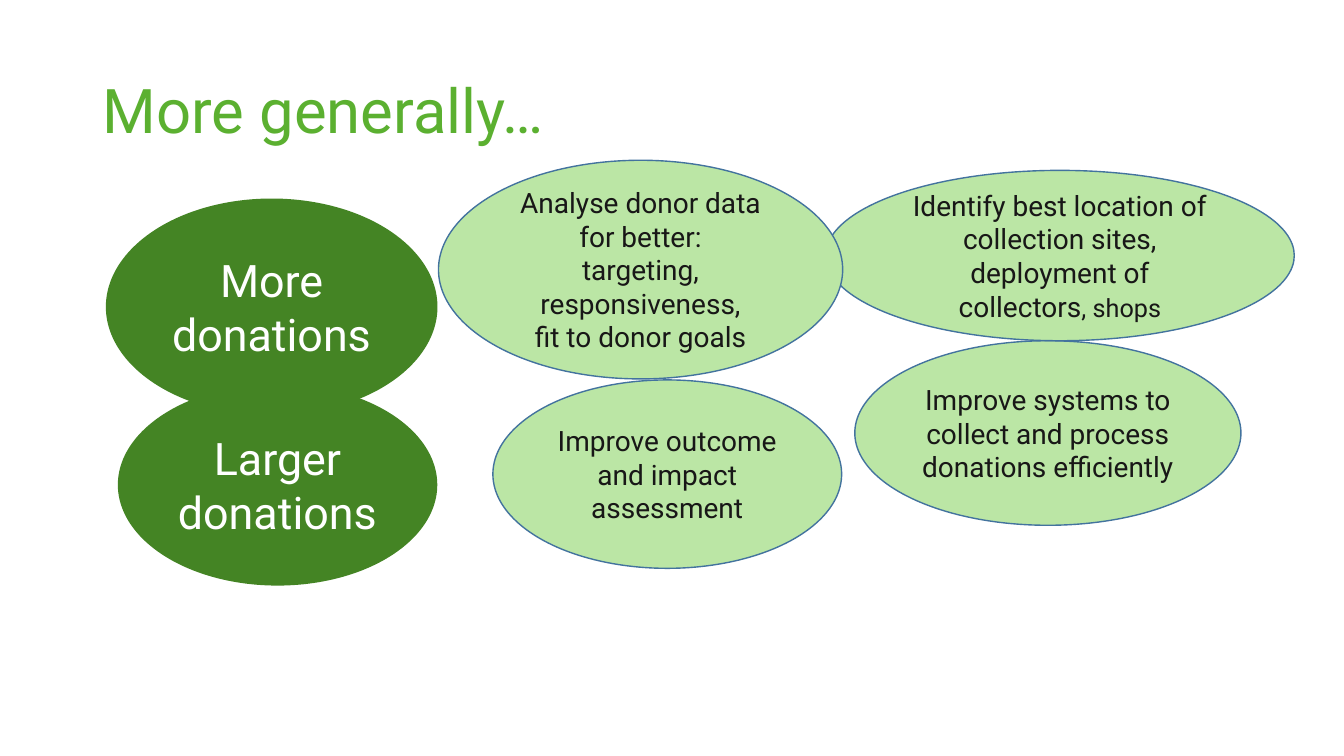
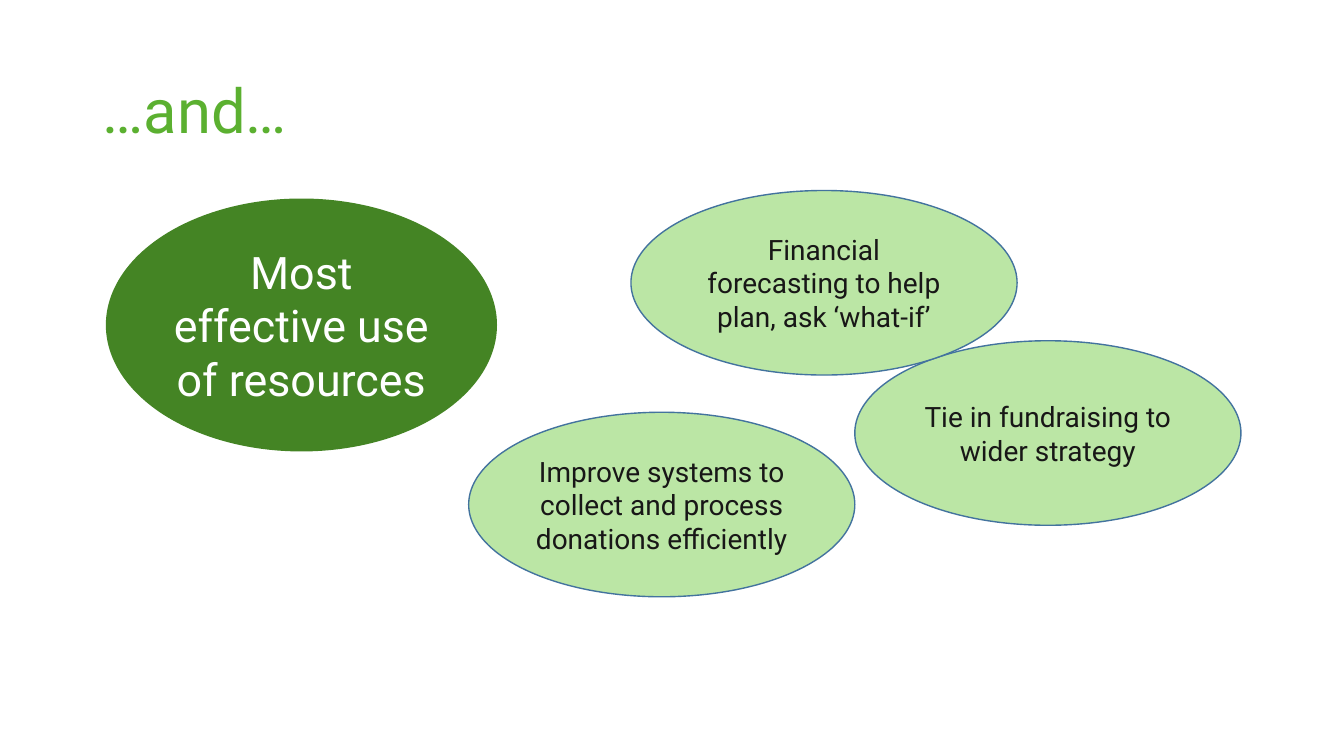
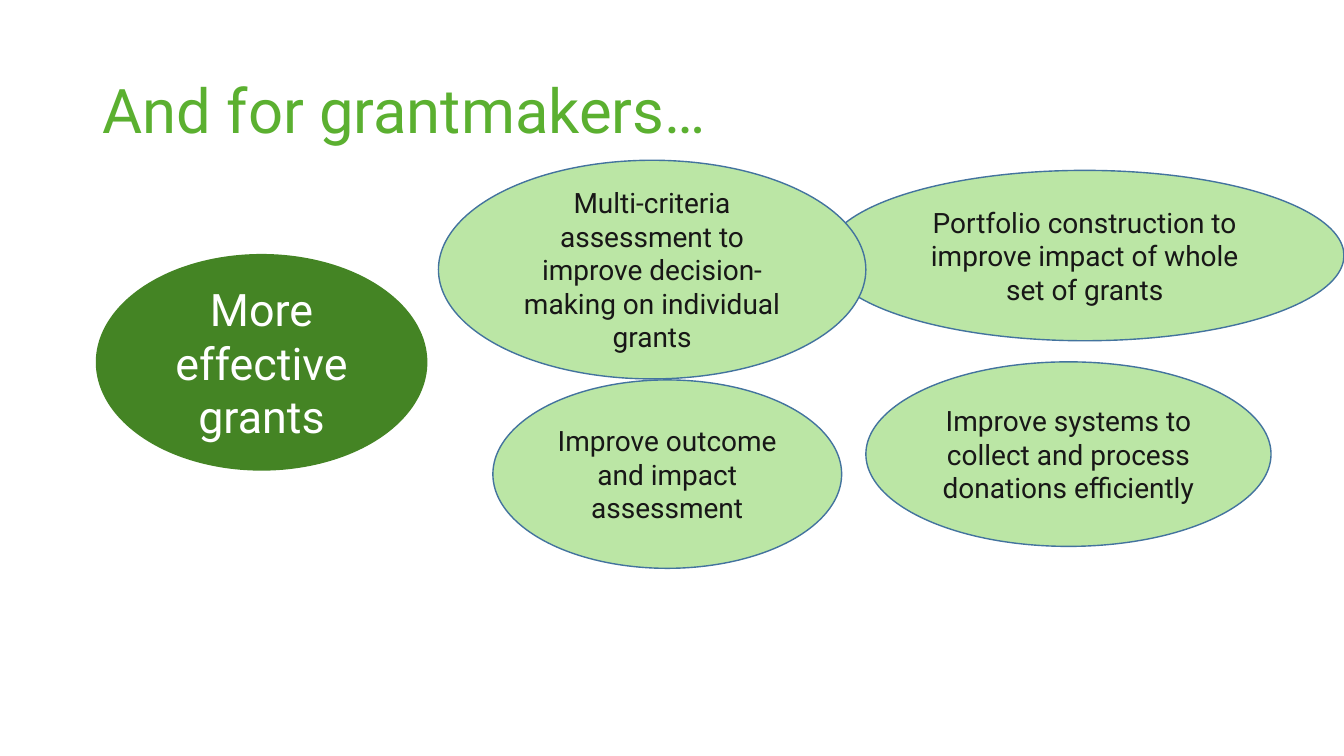
from dataclasses import dataclass

from pptx import Presentation
from pptx.dml.color import RGBColor
from pptx.enum import shapes, text
from pptx.util import Pt

# Shared look
FONT = "Roboto"
COLOURS = {
    "title": "5BB030",
    "goal": "448424",
    "goal_text": "FFFFFF",
    "action": "BBE6A5",
    "action_line": "43739E",
    "action_text": "181717",
}
SLIDE_SIZE = (960, 540)
TITLE_BOX = (66.2, 28.8, 828, 104.4)
TITLE_SIZE = 44


@dataclass(frozen=True)
class Style:
    fill: str
    font_colour: str
    size: float
    line: str | None = None


@dataclass(frozen=True)
class Run:
    words: str
    size: float | None = None  # None takes the size of the oval's style


@dataclass(frozen=True)
class Oval:
    style: Style
    box: tuple[float, float, float, float]  # left, top, width, height
    paragraphs: tuple[tuple[Run, ...], ...]


@dataclass(frozen=True)
class Page:
    title: str
    ovals: tuple[Oval, ...]


GOAL = Style("goal", "goal_text", 32)
ACTION = Style("action", "action_text", 20, "action_line")


def goal(box: tuple[float, float, float, float], words: str) -> Oval:
    return Oval(GOAL, box, ((Run(words),),))


def action(box: tuple[float, float, float, float], *lines: str) -> Oval:
    return Oval(ACTION, box, tuple((Run(line),) for line in lines))


# Content, from back to front
SYSTEMS = "Improve systems to collect and process donations efficiently"
OUTCOME = action((352.1, 271.4, 249.1, 134.6),
                 "Improve outcome and impact assessment")
LOCATION = Oval(ACTION, (589.7, 121.7, 334.8, 121.7), ((
    Run("Identify best location of collection sites, "
        "deployment of collectors"),
    Run(", shops", 18),
),))

PAGES = (
    Page("More generally…", (
        goal((75.6, 141.8, 236.9, 154.8), "More donations"),
        goal((84.2, 274.3, 228.2, 144), "Larger donations"),
        action((610.6, 243.4, 275.8, 131.8), SYSTEMS),
        OUTCOME,
        LOCATION,
        action((313.2, 114.5, 288.7, 156.2),
               "Analyse donor data for better:",
               "targeting, responsiveness,",
               "fit to donor goals"),
    )),
    Page("…and…", (
        goal((75.6, 141.8, 279.4, 180.7), "Most effective use of resources"),
        action((610.6, 243.4, 275.8, 131.8),
               "Tie in fundraising to wider strategy"),
        action((450.7, 136.1, 275.8, 131.8),
               "Financial forecasting to help plan, ask ‘what-if’"),
        action((334.8, 294.5, 275.8, 131.8), SYSTEMS),
    )),
    Page("And for grantmakers…", (
        goal((68.4, 181.4, 236.9, 154.8), "More effective grants"),
        action((618.5, 258.5, 289.4, 131.8), SYSTEMS),
        OUTCOME,
        action((589.7, 121.7, 370.3, 121.7),
               "Portfolio construction to improve impact of whole "
               "set of grants"),
        action((313.2, 114.5, 305.3, 156.2),
               "Multi-criteria assessment to improve decision-making "
               "on individual grants"),
    )),
)


# Drawing
def rgb(name: str) -> RGBColor:
    return RGBColor.from_string(COLOURS[name])


def add_run(paragraph, words: str, size: float, colour: str) -> None:
    run = paragraph.add_run()
    run.text = words
    run.font.name = FONT
    run.font.size = Pt(size)
    run.font.color.rgb = rgb(colour)


def draw_title(slide, words: str) -> None:
    frame = slide.shapes.add_textbox(*map(Pt, TITLE_BOX)).text_frame
    frame.word_wrap = True
    frame.vertical_anchor = text.MSO_ANCHOR.MIDDLE
    heading = frame.paragraphs[0]
    heading.line_spacing = 0.9
    add_run(heading, words, TITLE_SIZE, "title")


def draw_oval(slide, oval: Oval) -> None:
    style = oval.style
    ellipse = slide.shapes.add_shape(shapes.MSO_SHAPE.OVAL,
                                     *map(Pt, oval.box))
    ellipse.shadow.inherit = False
    ellipse.fill.solid()
    ellipse.fill.fore_color.rgb = rgb(style.fill)
    if style.line:
        ellipse.line.color.rgb = rgb(style.line)
        ellipse.line.width = Pt(1)
    else:
        ellipse.line.fill.background()

    frame = ellipse.text_frame
    frame.word_wrap = True
    frame.vertical_anchor = text.MSO_ANCHOR.MIDDLE
    for index, runs in enumerate(oval.paragraphs):
        paragraph = frame.add_paragraph() if index else frame.paragraphs[0]
        paragraph.alignment = text.PP_ALIGN.CENTER
        for run in runs:
            add_run(paragraph, run.words, run.size or style.size,
                    style.font_colour)


def main() -> None:
    deck = Presentation()
    deck.slide_width, deck.slide_height = map(Pt, SLIDE_SIZE)
    blank = deck.slide_layouts[6]
    for page in PAGES:
        slide = deck.slides.add_slide(blank)
        draw_title(slide, page.title)
        for oval in page.ovals:
            draw_oval(slide, oval)
    deck.save("out.pptx")


if __name__ == "__main__":
    main()
